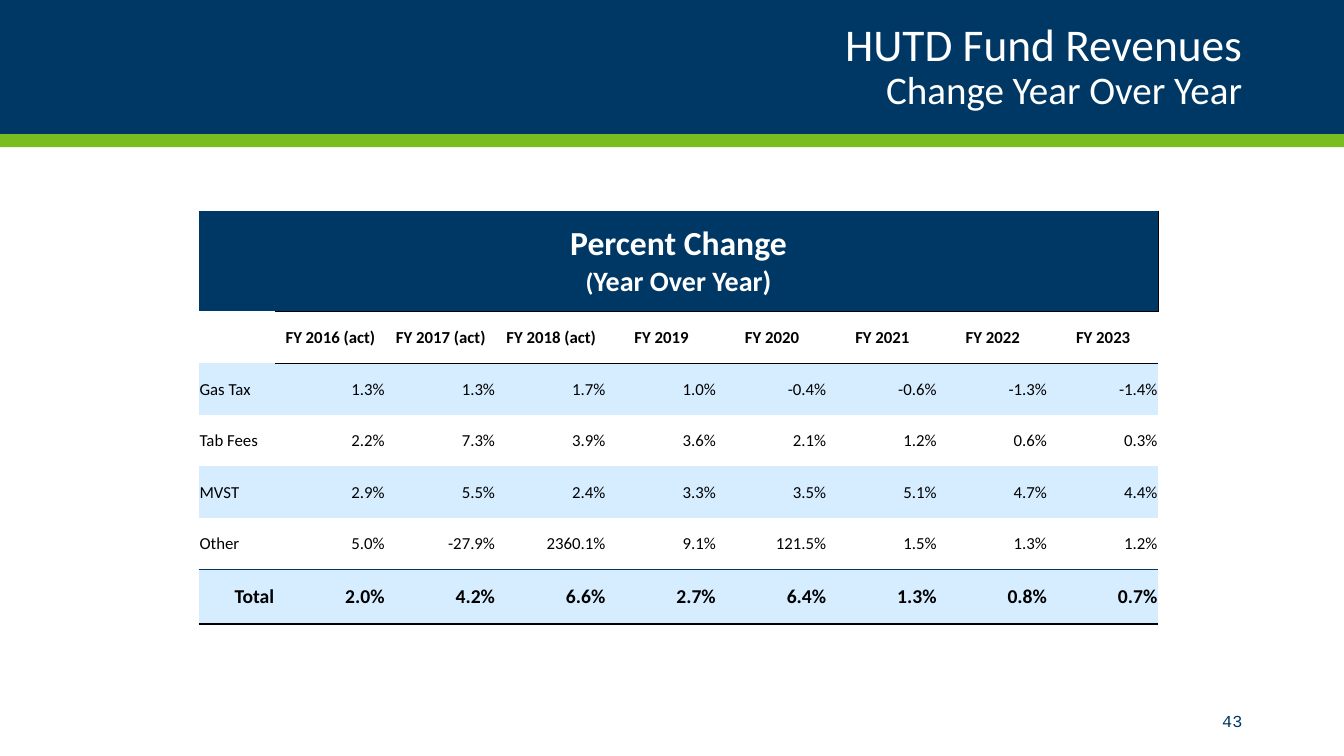
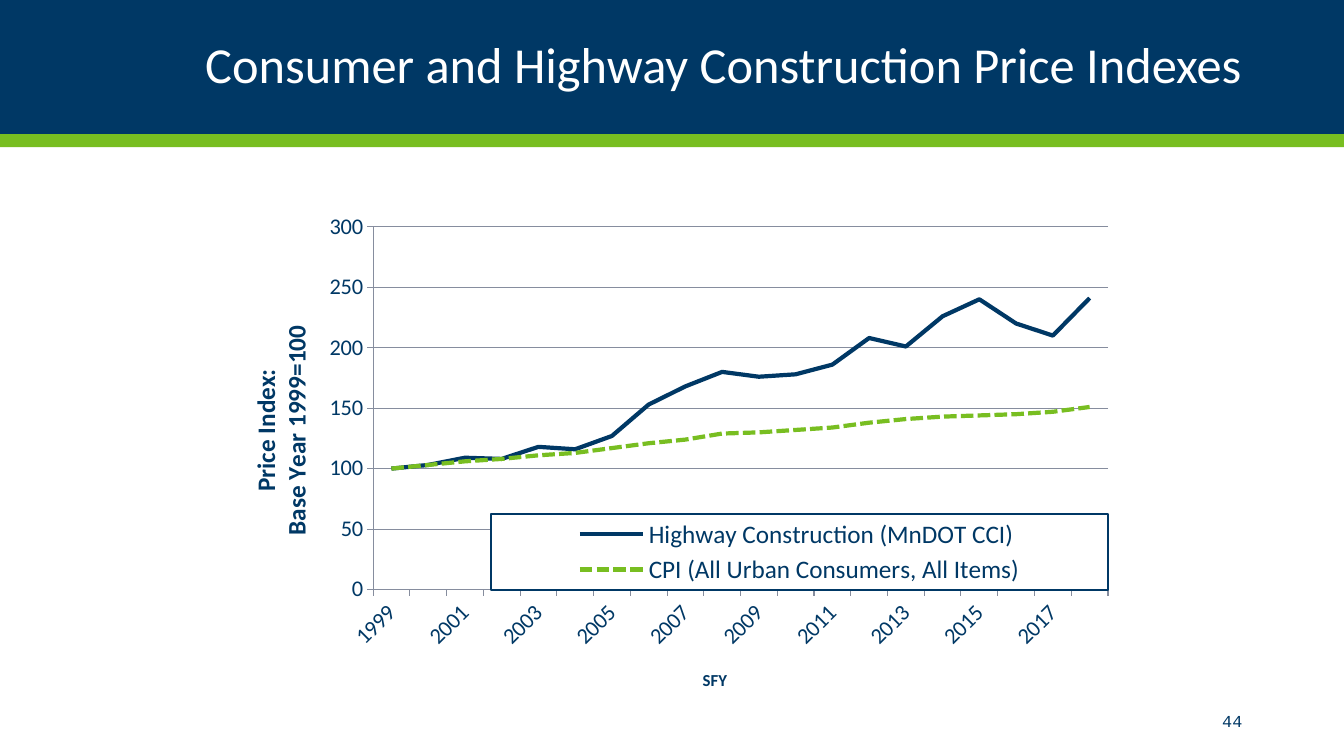
from dataclasses import dataclass
from typing import Any

from lxml.etree import Element, SubElement
from pptx import Presentation
from pptx.chart.data import CategoryChartData
from pptx.dml.color import RGBColor
from pptx.enum.chart import XL_CHART_TYPE as ChartType
from pptx.enum.chart import XL_LEGEND_POSITION as LegendPos
from pptx.enum.chart import XL_TICK_MARK as Tick
from pptx.enum.dml import MSO_LINE_DASH_STYLE as Dash
from pptx.enum.shapes import MSO_SHAPE as Preset
from pptx.enum.text import MSO_ANCHOR as Anchor
from pptx.enum.text import MSO_AUTO_SIZE as AutoSize
from pptx.enum.text import PP_ALIGN as Align
from pptx.oxml.ns import qn
from pptx.util import Emu, Inches, Pt

# Shared look
NAVY = RGBColor(0x00, 0x38, 0x65)
GREEN = RGBColor(0x78, 0xBE, 0x21)
PALE = RGBColor(0xD6, 0xED, 0xFF)
WHITE = RGBColor(0xFF, 0xFF, 0xFF)
BLACK = RGBColor(0x00, 0x00, 0x00)
GREY = RGBColor(0x86, 0x8D, 0x9E)
FONT, NUMBER_FONT = "Calibri", "Courier New"
SLIDE_W, SLIDE_H = 13.33, 7.5
NO_GRID_STYLE = "{2D5ABB26-0587-4C30-8999-92F81FD0307C}"


@dataclass(frozen=True)
class Box:
    left: float
    top: float
    width: float
    height: float

    def emu(self) -> tuple[Emu, ...]:
        return tuple(Inches(v) for v in (self.left, self.top, self.width, self.height))


@dataclass(frozen=True)
class Band:
    box: Box
    color: RGBColor


@dataclass(frozen=True)
class Line:
    text: str
    size: float


@dataclass(frozen=True)
class Border:
    side: str
    color: RGBColor
    width: float


@dataclass(frozen=True)
class Row:
    label: str
    values: str
    size: float = 12
    bold: bool = False
    align: Align = Align.RIGHT
    label_align: Align = Align.LEFT
    fill: RGBColor | None = None
    borders: tuple[Border, ...] = ()


@dataclass(frozen=True)
class PriceIndex:
    name: str
    values: tuple[int, ...]
    color: RGBColor
    dash: Dash


BANDS = (Band(Box(0, 0, SLIDE_W, 1.33), NAVY), Band(Box(0, 1.33, SLIDE_W, 0.13), GREEN))
TITLE_BOX = Box(0.92, 0.17, 11.5, 1)
NUMBER_BOX = Box(10.82, 6.95, 1.6, 0.4)

# Revenue table
TABLE_BOX = Box(1.97, 2.09, 9.52, 4.1)
LABEL_W, HEAD_H, TOTAL_H = 0.76, 1.0, 0.54
HEADING = ((Line("Percent Change", 24),), (Line("(", 18), Line("Year Over Year)", 20)))
YEARS = [f"FY {year}" + (" (act)" if year < 2019 else "") for year in range(2016, 2024)]
ROWS = (
    Row("Gas Tax", "1.3% 1.3% 1.7% 1.0% -0.4% -0.6% -1.3% -1.4%", fill=PALE),
    Row("Tab Fees", "2.2% 7.3% 3.9% 3.6% 2.1% 1.2% 0.6% 0.3%"),
    Row("MVST", "2.9% 5.5% 2.4% 3.3% 3.5% 5.1% 4.7% 4.4%", fill=PALE),
    Row("Other", "5.0% -27.9% 2360.1% 9.1% 121.5% 1.5% 1.3% 1.2%",
        borders=(Border("B", NAVY, 1.5),)),
    Row("Total", "2.0% 4.2% 6.6% 2.7% 6.4% 1.3% 0.8% 0.7%", size=14, bold=True,
        label_align=Align.RIGHT, fill=PALE,
        borders=(Border("T", NAVY, 1.5), Border("B", BLACK, 2))),
)
YEAR_BORDERS = (Border("T", BLACK, 0.5), Border("B", BLACK, 0.5))

# Price index chart
CHART_BOX = Box(2.17, 2, 9, 5)
INDEXES = (
    PriceIndex("Highway Construction (MnDOT CCI)",
               (100, 103, 109, 108, 118, 116, 127, 153, 168, 180,
                176, 178, 186, 208, 201, 226, 240, 220, 210, 241), NAVY, Dash.SOLID),
    PriceIndex("CPI (All Urban Consumers, All Items)",
               (100, 103, 106, 108, 111, 113, 117, 121, 124, 129,
                130, 132, 134, 138, 141, 143, 144, 145, 147, 151), GREEN, Dash.SQUARE_DOT),
)


def style_font(font: Any, size: float, color: RGBColor, bold: bool = False,
               name: str = FONT) -> None:
    for attribute, value in {"name": name, "size": Pt(size), "bold": bold}.items():
        setattr(font, attribute, value)
    font.color.rgb = color


def write(paragraph: Any, line: Line, color: RGBColor, align: Align,
          bold: bool = False, name: str = FONT) -> None:
    paragraph.alignment = align
    run = paragraph.add_run()
    run.text = line.text
    style_font(run.font, line.size, color, bold, name)


def add_bands(prs: Any, slide: Any) -> None:
    """Draw the bands and hand them to the master, behind its placeholders."""
    tree = prs.slide_master.element.cSld.spTree
    for index, band in enumerate(BANDS):
        shape = slide.shapes.add_shape(Preset.RECTANGLE, *band.box.emu())
        shape.shadow.inherit = False
        shape.fill.solid()
        shape.fill.fore_color.rgb = band.color
        shape.line.fill.background()
        shape.element.nvSpPr.cNvPr.set("id", str(100 + index))
        tree.insert(2 + index, shape.element)


def add_slide(prs: Any, number: int, *title_lines: Line) -> Any:
    slide = prs.slides.add_slide(prs.slide_layouts[5])
    title = slide.shapes.title
    title.left, title.top, title.width, title.height = TITLE_BOX.emu()
    frame = title.text_frame
    frame.auto_size, frame.vertical_anchor = AutoSize.NONE, Anchor.MIDDLE
    for index, line in enumerate(title_lines):
        paragraph = frame.add_paragraph() if index else frame.paragraphs[0]
        paragraph.line_spacing = 0.9
        write(paragraph, line, WHITE, Align.RIGHT)

    page = slide.shapes.add_textbox(*NUMBER_BOX.emu()).text_frame
    page.word_wrap, page.vertical_anchor = True, Anchor.MIDDLE
    write(page.paragraphs[0], Line(str(number), 12), NAVY, Align.RIGHT, name=NUMBER_FONT)
    return slide


def format_cell(cell: Any, fill: RGBColor | None, borders: tuple[Border, ...] = ()) -> None:
    margin = Inches(0.01)
    for attribute, value in {"margin_left": margin, "margin_right": margin,
                             "margin_top": margin, "margin_bottom": 0,
                             "vertical_anchor": Anchor.MIDDLE}.items():
        setattr(cell, attribute, value)
    properties = cell._tc.get_or_add_tcPr()
    for border in borders:
        edge = SubElement(properties, qn(f"a:ln{border.side}"), w=str(Pt(border.width)))
        solid = SubElement(edge, qn("a:solidFill"))
        SubElement(solid, qn("a:srgbClr"), val=str(border.color))
    if fill is None:
        cell.fill.background()
    else:
        cell.fill.solid()
        cell.fill.fore_color.rgb = fill


def add_revenue_table(slide: Any) -> None:
    row_count, column_count = len(ROWS) + 2, len(YEARS) + 1
    holder = slide.shapes.add_table(row_count, column_count, *TABLE_BOX.emu())
    holder.element.find(f".//{qn('a:tableStyleId')}").text = NO_GRID_STYLE
    table = holder.table
    table.first_row = table.horz_banding = False

    year_w = (TABLE_BOX.width - LABEL_W) / len(YEARS)
    for index, column in enumerate(table.columns):
        column.width = Inches(year_w if index else LABEL_W)
    row_h = (TABLE_BOX.height - HEAD_H - TOTAL_H) / (row_count - 2)
    for row, height in zip(table.rows, [HEAD_H, *[row_h] * (row_count - 2), TOTAL_H]):
        row.height = Inches(height)

    # Heading across all columns
    heading, heading_end = table.cell(0, 0), table.cell(0, column_count - 1)
    heading.merge(heading_end)
    for cell in (heading, heading_end):
        format_cell(cell, NAVY, (Border("R", BLACK, 0.5),))
    for index, parts in enumerate(HEADING):
        frame = heading.text_frame
        paragraph = frame.add_paragraph() if index else frame.paragraphs[0]
        for part in parts:
            write(paragraph, part, WHITE, Align.CENTER, bold=True)

    # Years
    format_cell(table.cell(1, 0), None)
    for column, year in enumerate(YEARS, 1):
        cell = table.cell(1, column)
        format_cell(cell, None, YEAR_BORDERS)
        write(cell.text_frame.paragraphs[0], Line(year, 12), BLACK, Align.CENTER, bold=True)

    # Revenue sources and total
    for index, row in enumerate(ROWS, 2):
        for column, text in enumerate([row.label, *row.values.split()]):
            cell = table.cell(index, column)
            format_cell(cell, row.fill, row.borders)
            write(cell.text_frame.paragraphs[0], Line(text, row.size), BLACK,
                  row.align if column else row.label_align, row.bold)


def place(parent: Any, before: str, **shares: float) -> None:
    """Fix a chart part at shares of the chart's size, ahead of a named child."""
    for old in parent.findall(qn("c:layout")):
        parent.remove(old)
    layout = Element(qn("c:layout"))
    manual = SubElement(layout, qn("c:manualLayout"))
    if before == "c:barDir" or parent.tag == qn("c:plotArea"):
        SubElement(manual, qn("c:layoutTarget"), val="inner")
    for axis in "xy":
        SubElement(manual, qn(f"c:{axis}Mode"), val="edge")
    for key, share in shares.items():
        SubElement(manual, qn(f"c:{key}"), val=str(share))
    parent.find(qn(before)).addprevious(layout)


def format_axis(axis: Any, title_lines: tuple[str, ...], title_size: float,
                x: float, y: float) -> None:
    style_font(axis.tick_labels.font, 16, NAVY)
    axis.major_tick_mark, axis.minor_tick_mark = Tick.OUTSIDE, Tick.NONE
    axis.format.line.color.rgb = GREY
    axis.format.line.width = Pt(0.75)
    frame = axis.axis_title.text_frame
    for index, text in enumerate(title_lines):
        paragraph = frame.add_paragraph() if index else frame.paragraphs[0]
        write(paragraph, Line(text, title_size), NAVY, Align.CENTER, bold=True)
    title = axis.axis_title._element
    place(title, "c:overlay", x=x, y=y)


def add_index_chart(slide: Any) -> None:
    data = CategoryChartData(number_format="#,##0")
    data.categories = [str(year) for year in range(1999, 2019)]
    for index in INDEXES:
        data.add_series(index.name, index.values)
    chart = slide.shapes.add_chart(ChartType.LINE, *CHART_BOX.emu(), data).chart
    chart.has_title = False
    style_font(chart.font, 10, NAVY)

    # Lines
    plot = chart.plots[0]
    plot.vary_by_categories = False
    for series, index in zip(plot.series, INDEXES):
        series.smooth = False
        line = series.format.line
        line.color.rgb = index.color
        line.width, line.dash_style = Pt(3), index.dash
    place(chart.element.find(f".//{qn('c:plotArea')}"), "c:lineChart",
          x=0.17, y=0.05, w=0.81, h=0.72)

    # Axes
    years, values = chart.category_axis, chart.value_axis
    format_axis(years, ("SFY",), 12, x=0.53, y=0.92)
    format_axis(values, ("Price Index:", "Base Year 1999=100"), 18, x=0.03, y=0.24)
    years.tick_labels.font.bold = False
    axis = years._element
    axis.find(qn("c:txPr")).find(qn("a:bodyPr")).set("rot", "-2700000")
    skip = Element(qn("c:tickLblSkip"), val="2")
    axis.find(qn("c:noMultiLvlLbl")).addprevious(skip)
    values.minimum_scale, values.maximum_scale, values.major_unit = 0, 300, 50
    values.tick_labels.number_format = "#,##0"
    values.tick_labels.number_format_is_linked = False
    values.major_gridlines.format.line.color.rgb = GREY
    values.major_gridlines.format.line.width = Pt(0.75)

    # Legend over the plot
    chart.has_legend = True
    legend = chart.legend
    legend.position, legend.include_in_layout = LegendPos.RIGHT, True
    style_font(legend.font, 18, NAVY)
    place(legend._element, "c:overlay", x=0.3, y=0.62, w=0.68, h=0.15)
    box = Element(qn("c:spPr"))
    for parent, color in ((box, WHITE), (SubElement(box, qn("a:ln"), w=str(Pt(1.5))), NAVY)):
        solid = Element(qn("a:solidFill"))
        SubElement(solid, qn("a:srgbClr"), val=str(color))
        parent.insert(0, solid)
    legend._element.find(qn("c:txPr")).addprevious(box)


def main() -> None:
    prs = Presentation()
    prs.slide_width, prs.slide_height = Inches(SLIDE_W), Inches(SLIDE_H)

    revenues = add_slide(prs, 43, Line("HUTD Fund Revenues", 32.4),
                         Line("Change Year Over Year", 27.9))
    add_bands(prs, revenues)
    add_revenue_table(revenues)

    prices = add_slide(prs, 44, Line("Consumer and Highway Construction Price Indexes", 36))
    add_index_chart(prices)

    prs.save("out.pptx")


if __name__ == "__main__":
    main()
